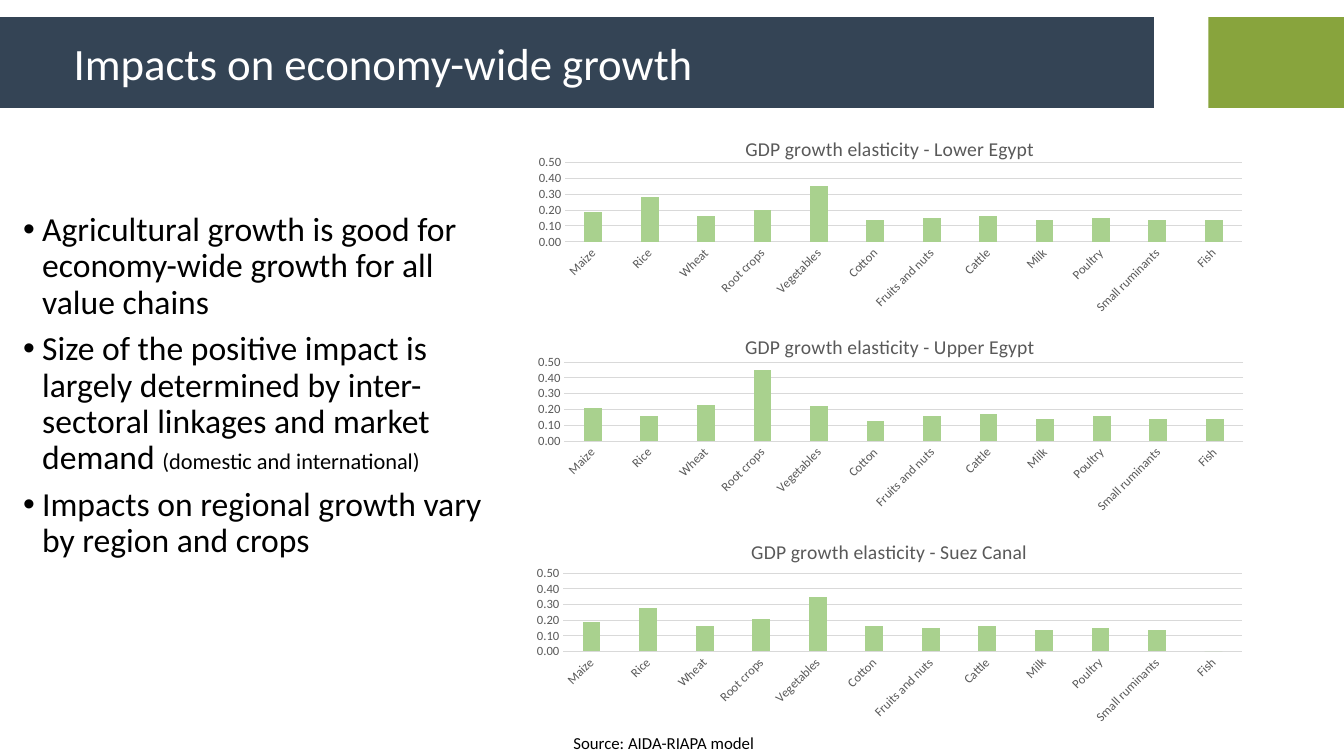
from dataclasses import dataclass

from lxml.etree import SubElement
from pptx import Presentation
from pptx.chart.data import CategoryChartData as Data
from pptx.dml.color import RGBColor as Rgb
from pptx.enum.chart import XL_CHART_TYPE as Kind, XL_TICK_MARK as Tick
from pptx.enum.shapes import MSO_SHAPE as Shape
from pptx.enum.text import MSO_ANCHOR as Anchor, MSO_AUTO_SIZE as Fit, PP_ALIGN as Align
from pptx.oxml import parse_xml
from pptx.oxml.ns import nsdecls, qn
from pptx.util import Cm, Pt


@dataclass(frozen=True)
class Theme:
    face: str = "Calibri"
    navy: str = "344455"
    green: str = "88A43D"
    bar: str = "A9D18E"
    grid: str = "D9D9D9"
    gray: str = "595959"
    ink: str = "000000"
    white: str = "FFFFFF"
    head: int = 32
    body: int = 24
    small: int = 16
    cap: int = 14
    note: int = 12
    tick: int = 9


LOOK = Theme()

CROPS = ["Maize", "Rice", "Wheat", "Root crops", "Vegetables", "Cotton",
         "Fruits and nuts", "Cattle", "Milk", "Poultry", "Small ruminants", "Fish"]

# Region, box in cm, title corner, plot area (shares of the box), values
CHARTS = [
    ("Lower Egypt", (13.13, 2.9, 18.54, 5.16), (0.3, 0.08), (0.06, 0.23, 0.92, 0.39),
     [0.19, 0.28, 0.16, 0.2, 0.35, 0.14, 0.15, 0.16, 0.14, 0.15, 0.14, 0.14]),
    ("Upper Egypt", (13.11, 7.95, 18.59, 5.11), (0.3, 0.07), (0.06, 0.23, 0.92, 0.39),
     [0.21, 0.16, 0.23, 0.45, 0.22, 0.13, 0.16, 0.17, 0.14, 0.16, 0.14, 0.14]),
    ("Suez Canal", (13.08, 13.06, 18.59, 5.33), (0.31, 0.08), (0.06, 0.26, 0.92, 0.37),
     [0.19, 0.28, 0.16, 0.21, 0.35, 0.16, 0.15, 0.16, 0.14, 0.15, 0.14, 0]),
]

POINTS = [
    [("Agricultural growth is good for economy-wide growth for all value chains", LOOK.body)],
    [("Size of the positive impact is largely determined by inter-sectoral linkages "
      "and market demand ", LOOK.body), ("(domestic and international)", LOOK.small)],
    [("Impacts on regional growth vary by region and crops", LOOK.body)],
]


def put(item, vals):
    for key, val in vals.items():
        setattr(item, key, val)


def style(font, size, tone):
    put(font, {"name": LOOK.face, "size": Pt(size), "bold": False})
    font.color.rgb = Rgb.from_string(tone)


def place(item, box):
    put(item, dict(zip(("left", "top", "width", "height"), map(Cm, box))))


def block(slide, box, tone):
    rect = slide.shapes.add_shape(Shape.RECTANGLE, *map(Cm, box))
    rect.shadow.inherit = False
    rect.fill.solid()
    rect.fill.fore_color.rgb = Rgb.from_string(tone)
    rect.line.fill.background()


def header(slide, box):
    x, y, wide, high = box
    block(slide, (x, y, 29.08, high), LOOK.navy)
    block(slide, (x + 30.45, y, wide - 30.45, high), LOOK.green)
    title = slide.shapes.title
    place(title, (x + 1.6, y - 0.43, 26.59, 3.3))
    frame = title.text_frame
    put(frame, {"text": "Impacts on economy-wide growth", "word_wrap": True,
                "auto_size": Fit.NONE, "vertical_anchor": Anchor.MIDDLE})
    para = frame.paragraphs[0]
    put(para, {"alignment": Align.LEFT, "line_spacing": 0.9})
    style(para.runs[0].font, LOOK.head, LOOK.white)
    # Lift the title above its band
    slide.shapes._spTree.append(title._element)


def points(slide, box):
    body = slide.placeholders[1]
    place(body, box)
    frame = body.text_frame
    put(frame, {"word_wrap": True, "auto_size": Fit.NONE, "vertical_anchor": Anchor.TOP})
    for i, parts in enumerate(POINTS):
        para = frame.add_paragraph() if i else frame.paragraphs[0]
        put(para, {"alignment": Align.LEFT, "line_spacing": 0.9,
                   "space_before": Pt(7.5 if i else 0)})
        props = para._p.get_or_add_pPr()
        props.set("marL", str(Cm(0.48)))
        props.set("indent", str(-Cm(0.48)))
        SubElement(props, qn("a:buFont"), typeface="Arial")
        SubElement(props, qn("a:buChar"), char="•")
        for text, size in parts:
            run = para.add_run()
            run.text = text
            style(run.font, size, LOOK.ink)


def layout(node, spot, vals, inner=False):
    """Give a chart part a fixed place, as shares of the chart box."""
    for old in node.findall(qn("c:layout")):
        node.remove(old)
    keys = ("x", "y", "w", "h")[:len(vals)]
    tags = '<c:layoutTarget val="inner"/>' if inner else ""
    tags += "".join(f'<c:{key}Mode val="edge"/>' for key in keys[:2])
    tags += "".join(f'<c:{key} val="{val}"/>' for key, val in zip(keys, vals))
    node.insert(spot, parse_xml(f'<c:layout {nsdecls("c")}><c:manualLayout>{tags}'
                                "</c:manualLayout></c:layout>"))


def rule(line):
    line.color.rgb = Rgb.from_string(LOOK.grid)
    line.width = Pt(0.75)


def growth(slide, region, box, corner, area, vals):
    data = Data(number_format="0.00")
    data.categories = CROPS
    data.add_series("Series 1", vals)
    chart = slide.shapes.add_chart(Kind.COLUMN_CLUSTERED, *map(Cm, box), data).chart
    style(chart.font, 10, LOOK.ink)
    put(chart, {"has_legend": False, "has_title": True})

    # Chart title
    frame = chart.chart_title.text_frame
    frame.text = f"GDP growth elasticity - {region}"
    style(frame.paragraphs[0].runs[0].font, LOOK.cap, LOOK.gray)

    # Columns
    plot = chart.plots[0]
    put(plot, {"gap_width": 219, "overlap": -27, "vary_by_categories": False})
    fill = plot.series[0].format.fill
    fill.solid()
    fill.fore_color.rgb = Rgb.from_string(LOOK.bar)

    # Axes
    cat, val = chart.category_axis, chart.value_axis
    for axis in (cat, val):
        put(axis, {"major_tick_mark": Tick.NONE, "minor_tick_mark": Tick.NONE})
        style(axis.tick_labels.font, LOOK.tick, LOOK.gray)
    rule(cat.format.line)
    put(val, {"minimum_scale": 0, "maximum_scale": 0.5, "major_unit": 0.1,
              "has_major_gridlines": True})
    rule(val.major_gridlines.format.line)
    val.format.line.fill.background()
    put(val.tick_labels, {"number_format": "0.00", "number_format_is_linked": False})

    # Slanted labels and fixed places
    root = chart.element
    root.xpath(".//c:catAx/c:txPr/a:bodyPr")[0].set("rot", "-2700000")
    layout(root.xpath("c:chart/c:title")[0], 1, corner)
    layout(root.xpath(".//c:plotArea")[0], 0, area, inner=True)


def source(slide, box):
    frame = slide.shapes.add_textbox(*map(Cm, box)).text_frame
    put(frame, {"text": "Source: AIDA-RIAPA model", "word_wrap": False,
                "auto_size": Fit.SHAPE_TO_FIT_TEXT})
    style(frame.paragraphs[0].runs[0].font, LOOK.note, LOOK.ink)


def main():
    deck = Presentation()
    put(deck, {"slide_width": Cm(33.87), "slide_height": Cm(19.05)})
    slide = deck.slides.add_slide(deck.slide_layouts[1])
    header(slide, (0, 0.43, 33.87, 2.29))
    for item in CHARTS:
        growth(slide, *item)
    points(slide, (0.33, 5.23, 12.32, 13.82))
    source(slide, (14.2, 18.34, 5.13, 0.76))
    deck.save("out.pptx")


if __name__ == "__main__":
    main()
